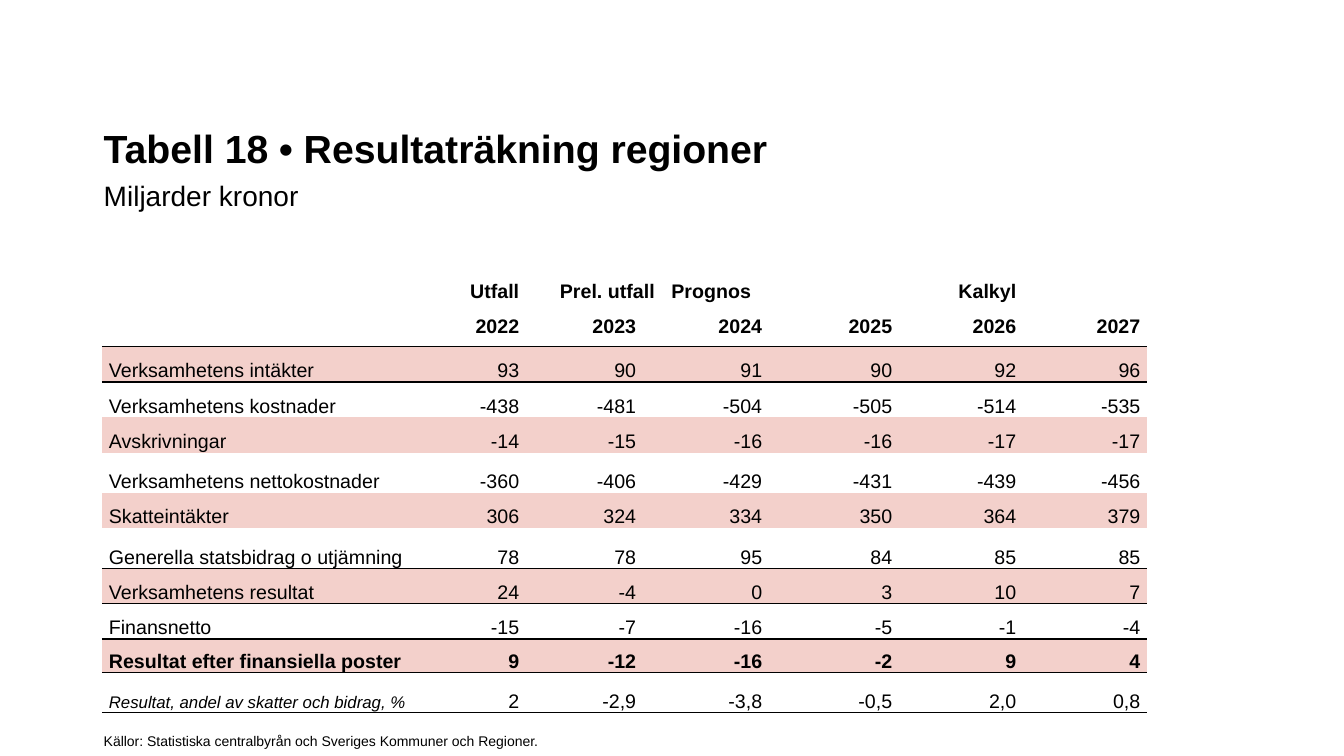
import pptx
import pptx.dml.color
import pptx.enum.text
import pptx.oxml
import pptx.oxml.ns
import pptx.util

ALIGN = pptx.enum.text.PP_ALIGN
ANCHOR = pptx.enum.text.MSO_ANCHOR
INK, PINK = "000000", "F3D0CB"
PLAIN_TABLE_STYLE = "{2D5ABB26-0587-4C30-8999-92F81FD0307C}"

HEADINGS = [
    ["", "Utfall", "", "", "Kalkyl", "", ""],
    ["", "2022", "2023", "2024", "2025", "2026", "2027"],
]
RESULTS = [
    ["Verksamhetens intäkter", "93", "90", "91", "90", "92", "96"],
    ["Verksamhetens kostnader", "-438", "-481", "-504", "-505", "-514", "-535"],
    ["Avskrivningar", "-14", "-15", "-16", "-16", "-17", "-17"],
    ["Verksamhetens nettokostnader", "-360", "-406", "-429", "-431", "-439", "-456"],
    ["Skatteintäkter", "306", "324", "334", "350", "364", "379"],
    ["Generella statsbidrag o utjämning", "78", "78", "95", "84", "85", "85"],
    ["Verksamhetens resultat", "24", "-4", "0", "3", "10", "7"],
    ["Finansnetto", "-15", "-7", "-16", "-5", "-1", "-4"],
    ["Resultat efter finansiella poster", "9", "-12", "-16", "-2", "9", "4"],
    ["Resultat, andel av skatter och bidrag, %", "2", "-2,9", "-3,8", "-0,5", "2,0", "0,8"],
]
COLUMN_SHARES = [23.33, 8.25, 8.7, 9.38, 9.68, 9.23, 9.23]
NORMAL, TALL, LOW = 4.67, 5.33, 4.4
ROW_SHARES = [NORMAL] * 5 + [TALL, NORMAL, TALL, NORMAL, NORMAL, LOW, TALL]
TOTAL_ROW, SHARE_ROW = 10, 11
RULED_BELOW = {1, 7, 8, 9, 10, 11}


def color(hex_value):
    return pptx.dml.color.RGBColor.from_string(hex_value)


def write(paragraph, text, size=14, bold=False, italic=False, ink=INK, tracking=0):
    run = paragraph.add_run()
    run.text = text
    run.font.name = "Arial"
    run.font.size = pptx.util.Pt(size)
    run.font.bold = bold
    run.font.italic = italic
    run.font.color.rgb = color(ink)
    if tracking:
        run.font._element.set("spc", str(round(tracking * 100)))


def rule(cell, side):
    cell._tc.get_or_add_tcPr().append(pptx.oxml.parse_xml(
        f'<a:{side} {pptx.oxml.ns.nsdecls("a")} w="12700"><a:solidFill>'
        f'<a:srgbClr val="{INK}"/></a:solidFill></a:{side}>'))


class Page:
    """Holds the slide and places elements by percent of its size."""

    def __init__(self, deck):
        self.deck = deck
        self.slide = deck.slides.add_slide(deck.slide_layouts[6])

    def across(self, share):
        return round(self.deck.slide_width * share / 100)

    def down(self, share):
        return round(self.deck.slide_height * share / 100)

    def place(self, left, top, width, height):
        return self.across(left), self.down(top), self.across(width), self.down(height)

    def text(self, *area, anchor=ANCHOR.TOP):
        frame = self.slide.shapes.add_textbox(*self.place(*area)).text_frame
        frame.word_wrap = True
        frame.vertical_anchor = anchor
        return frame.paragraphs[0]

    def table(self, left, top, columns, rows):
        area = self.place(left, top, sum(columns), sum(rows))
        table = self.slide.shapes.add_table(len(rows), len(columns), *area).table
        table.first_row = table.horz_banding = False
        style = table._tbl.tblPr.find(pptx.oxml.ns.qn("a:tableStyleId"))
        style.text = PLAIN_TABLE_STYLE
        for column, share in zip(table.columns, columns):
            column.width = self.across(share)
        for row, share in zip(table.rows, rows):
            row.height = self.down(share)
        return table

    def cell(self, table, row, column, text):
        cell = table.cell(row, column)
        heading = row < len(HEADINGS)
        cell.margin_left = cell.margin_right = pptx.util.Inches(0.07)
        cell.margin_top = cell.margin_bottom = 0
        cell.vertical_anchor = ANCHOR.MIDDLE if heading else ANCHOR.BOTTOM
        if row - 1 in RULED_BELOW:
            rule(cell, "lnT")
        if row in RULED_BELOW:
            rule(cell, "lnB")
        if not heading and row % 2 == 0:
            cell.fill.solid()
            cell.fill.fore_color.rgb = color(PINK)
        else:
            cell.fill.background()
        paragraph = cell.text_frame.paragraphs[0]
        paragraph.alignment = ALIGN.RIGHT if column else ALIGN.LEFT
        paragraph.line_spacing = pptx.util.Pt(13)
        paragraph.space_after = pptx.util.Pt(1)
        paragraph.font.size = pptx.util.Pt(14)
        if text:
            note = row == SHARE_ROW and column == 0
            write(paragraph, text, size=12 if note else 14, italic=note,
                  bold=heading or row == TOTAL_ROW)


def main():
    deck = pptx.Presentation()
    deck.slide_width = pptx.util.Inches(13.33)
    deck.slide_height = pptx.util.Inches(7.5)
    page = Page(deck)

    title = page.text(6.98, 10.67, 90.92, 18, anchor=ANCHOR.BOTTOM)
    title.line_spacing = 1.2
    title.space_after = pptx.util.Pt(4)
    write(title, "Tabell 18 • Resultaträkning regioner", size=28, bold=True)
    title.add_line_break()
    write(title, "Miljarder kronor", size=20)

    accounts = page.table(7.58, 36.53, COLUMN_SHARES, ROW_SHARES)
    for row, values in enumerate(HEADINGS + RESULTS):
        for column, value in enumerate(values):
            page.cell(accounts, row, column, value)
    for first in (2, 4):
        accounts.cell(0, first).merge(accounts.cell(0, first + 1))
    forecast = accounts.cell(0, 2)
    forecast.margin_right = pptx.util.Inches(0.18)
    for text, tracking in (("Prel. utfall", 0), (" ", 7.8), ("Prognos", 0)):
        write(forecast.text_frame.paragraphs[0], text, bold=True, tracking=tracking)

    sources = page.text(6.98, 96.27, 50.04, 3.6)
    write(sources, "Källor: Statistiska centralbyrån och Sveriges Kommuner och Regioner.", size=10)

    deck.save("out.pptx")


if __name__ == "__main__":
    main()
